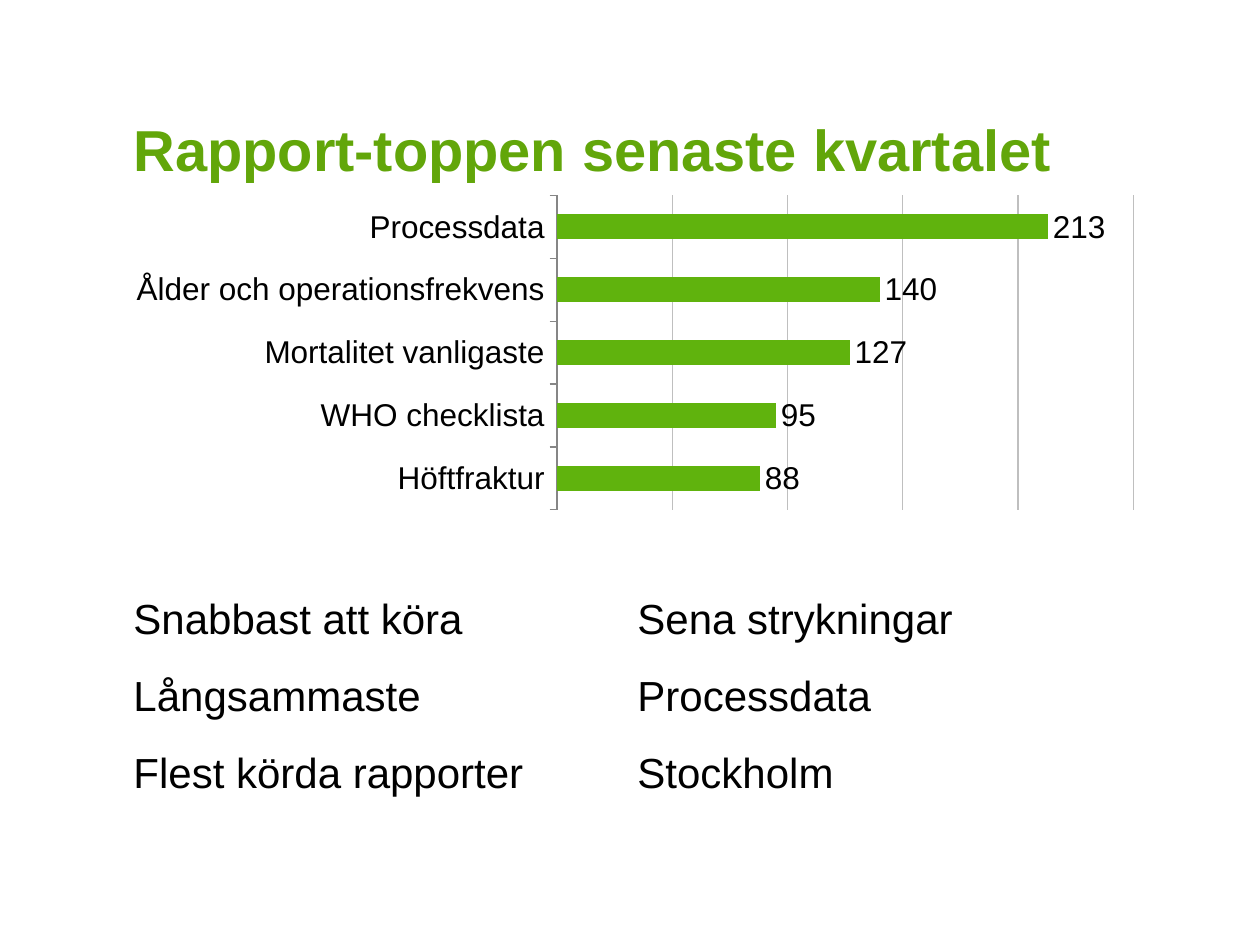
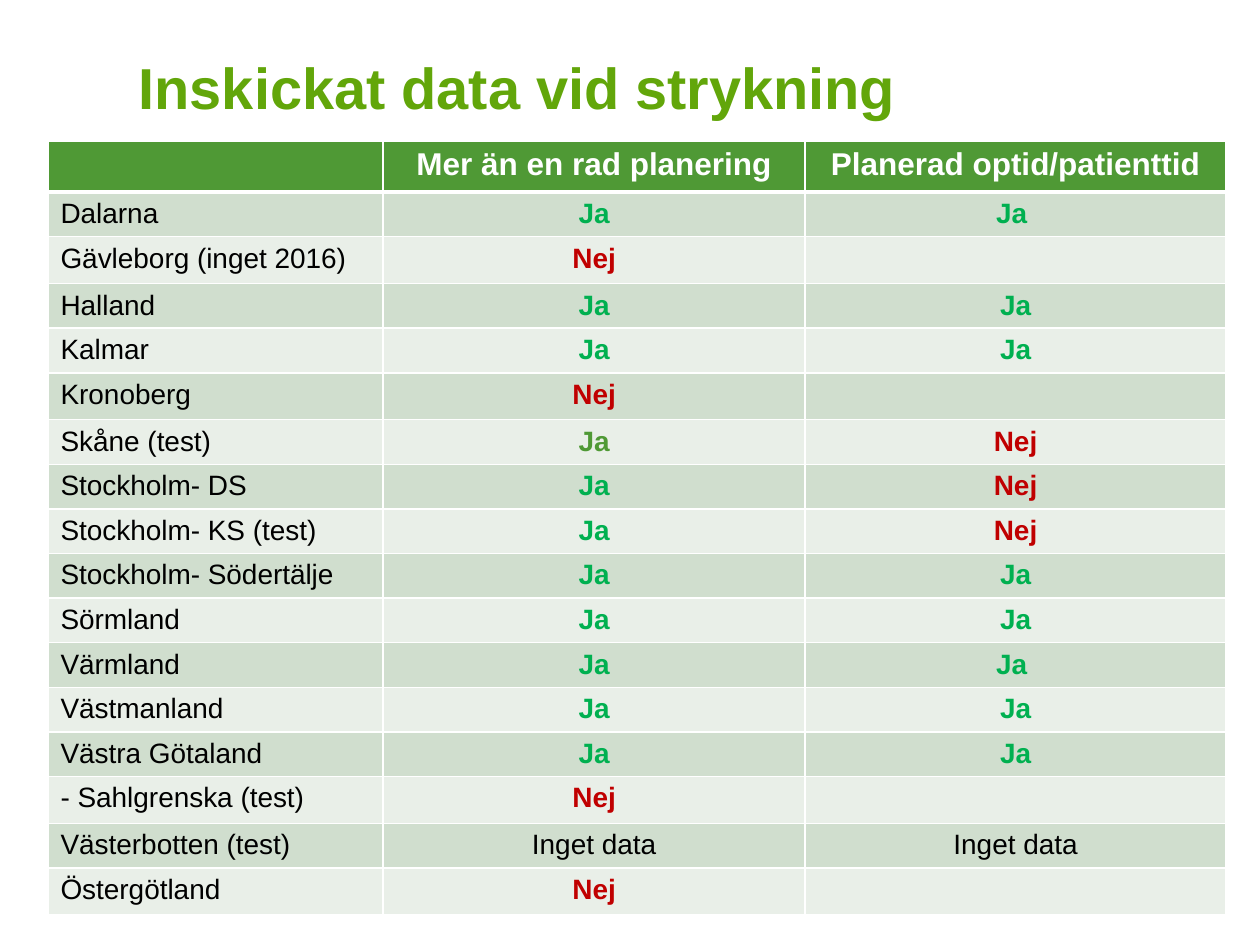
from dataclasses import dataclass

from lxml.etree import SubElement
from pptx import Presentation
from pptx.chart.data import CategoryChartData
from pptx.dml.color import RGBColor
from pptx.enum.chart import XL_CHART_TYPE, XL_LABEL_POSITION, XL_TICK_LABEL_POSITION, XL_TICK_MARK
from pptx.enum.text import MSO_ANCHOR, MSO_AUTO_SIZE, PP_ALIGN
from pptx.oxml import parse_xml
from pptx.oxml.ns import nsdecls, qn
from pptx.util import Pt


@dataclass(frozen=True)
class Theme:
    font: str = "Arial"
    title: str = "62A60A"
    bar: str = "60B30D"
    grid: str = "BFBFBF"
    axis: str = "868686"
    text: str = "000000"
    white: str = "FFFFFF"
    header: str = "4F9935"
    bands: tuple = ("D0DECE", "E9EFE8")
    yes: str = "00B050"
    no: str = "C00000"
    title_size: int = 33
    body_size: int = 24
    header_size: int = 18
    chart_size: int = 18
    cell_size: int = 16


THEME = Theme()

REPORTS_TITLE = "Rapport-toppen senaste kvartalet"
REPORTS = {
    "Processdata": 213,
    "Ålder och operationsfrekvens": 140,
    "Mortalitet vanligaste": 127,
    "WHO checklista": 95,
    "Höftfraktur": 88,
}
RECORDS = [
    ("Snabbast att köra", "Sena strykningar"),
    ("Långsammaste", "Processdata"),
    ("Flest körda rapporter", "Stockholm"),
]

REGIONS_TITLE = "Inskickat data vid strykning"
REGION_HEADER = ("", "Mer än en rad planering", "Planerad optid/patienttid")
REGIONS = [
    ("Dalarna", "Ja", "Ja "),
    ("Gävleborg (inget 2016)", "Nej", ""),
    ("Halland", "Ja", "Ja"),
    ("Kalmar", "Ja", "Ja"),
    ("Kronoberg", "Nej", ""),
    ("Skåne (test)", "Ja", "Nej"),
    ("Stockholm- DS", "Ja", "Nej"),
    ("Stockholm- KS (test)", "Ja", "Nej"),
    ("Stockholm- Södertälje", "Ja", "Ja"),
    ("Sörmland", "Ja", "Ja"),
    ("Värmland", "Ja", "Ja "),
    ("Västmanland", "Ja", "Ja"),
    ("Västra Götaland", "Ja", "Ja"),
    ("- Sahlgrenska (test)", "Nej", ""),
    ("Västerbotten (test)", "Inget data", "Inget data"),
    ("Östergötland", "Nej", ""),
]
ANSWER_COLORS = {"Ja": THEME.yes, "Nej": THEME.no}
SPECIAL_COLORS = {("Skåne (test)", 1): THEME.header}

COLUMN_WIDTHS = (191.5, 241.2, 240.5)
HEADER_HEIGHT, ROW_HEIGHT = 29, 25.5


def style_font(font, size, color, bold=False):
    font.name = THEME.font
    font.size = Pt(size)
    font.bold = bold
    font.color.rgb = RGBColor.from_string(color)


def clear_frame(frame):
    frame.margin_left = frame.margin_right = frame.margin_top = frame.margin_bottom = 0
    frame.word_wrap = True
    frame.auto_size = MSO_AUTO_SIZE.NONE


def add_titled_slide(deck, heading, left, top, width):
    slide = deck.slides.add_slide(deck.slide_layouts[5])
    title = slide.shapes.title
    title.left, title.top, title.width, title.height = Pt(left), Pt(top), Pt(width), Pt(67.7)
    frame = title.text_frame
    clear_frame(frame)
    frame.vertical_anchor = MSO_ANCHOR.BOTTOM
    frame.text = heading
    frame.paragraphs[0].alignment = PP_ALIGN.LEFT
    style_font(frame.paragraphs[0].runs[0].font, THEME.title_size, THEME.title, True)
    return slide


def add_report_chart(slide):
    ranking = CategoryChartData()
    ranking.categories = list(REPORTS)
    ranking.add_series("Series 1", list(REPORTS.values()))
    chart = slide.shapes.add_chart(
        XL_CHART_TYPE.BAR_CLUSTERED, Pt(66.2), Pt(108), Pt(593.3), Pt(187.2), ranking
    ).chart
    chart.has_legend = False
    chart.has_title = False
    style_font(chart.font, THEME.chart_size, THEME.text)

    names = chart.category_axis
    names.reverse_order = True
    names.has_major_gridlines = False
    names.major_tick_mark = XL_TICK_MARK.OUTSIDE
    names.tick_label_position = XL_TICK_LABEL_POSITION.NEXT_TO_AXIS
    names.format.line.color.rgb = RGBColor.from_string(THEME.axis)
    names.format.line.width = Pt(0.75)

    counts = chart.value_axis
    counts.minimum_scale, counts.maximum_scale, counts.major_unit = 0, 250, 50
    counts.visible = False
    counts.has_major_gridlines = True
    counts.major_gridlines.format.line.color.rgb = RGBColor.from_string(THEME.grid)
    counts.major_gridlines.format.line.width = Pt(0.75)

    plot = chart.plots[0]
    plot.gap_width = 150
    plot.vary_by_categories = False
    bars = plot.series[0]
    bars.format.fill.solid()
    bars.format.fill.fore_color.rgb = RGBColor.from_string(THEME.bar)
    plot.has_data_labels = True
    plot.data_labels.show_value = True
    plot.data_labels.position = XL_LABEL_POSITION.OUTSIDE_END
    style_font(plot.data_labels.font, THEME.chart_size, THEME.text)

    plot_area = chart.element.find(".//" + qn("c:plotArea"))
    for layout in plot_area.findall(qn("c:layout")):
        plot_area.remove(layout)
    bounds = {"x": 0.425, "y": 0.02, "w": 0.555, "h": 0.96}
    modes = "".join(f'<c:{side}Mode val="edge"/>' for side in "xy")
    sizes = "".join(f'<c:{side} val="{share}"/>' for side, share in bounds.items())
    plot_area.insert(0, parse_xml(
        f'<c:layout {nsdecls("c")}><c:manualLayout><c:layoutTarget val="inner"/>'
        f"{modes}{sizes}</c:manualLayout></c:layout>"
    ))


def add_records(slide):
    frame = slide.shapes.add_textbox(Pt(76.3), Pt(337), Pt(568), Pt(91.4)).text_frame
    clear_frame(frame)
    for index, record in enumerate(RECORDS):
        line = frame.add_paragraph() if index else frame.paragraphs[0]
        line.text = "\t".join(record)
        tabs = SubElement(line._p.get_or_add_pPr(), qn("a:tabLst"))
        SubElement(tabs, qn("a:tab"), pos=str(Pt(288)), algn="l")
        line.line_spacing = 1.05
        if index:
            line.space_before = Pt(14)
        style_font(line.runs[0].font, THEME.body_size, THEME.text)


def set_borders(cell, top, bottom):
    properties = cell._tc.get_or_add_tcPr()
    for index, (side, width) in enumerate({"L": 1, "R": 1, "T": top, "B": bottom}.items()):
        properties.insert(index, parse_xml(
            f'<a:ln{side} {nsdecls("a")} w="{Pt(width)}"><a:solidFill>'
            f'<a:srgbClr val="{THEME.white}"/></a:solidFill></a:ln{side}>'
        ))


def fill_cell(cell, content, fill, size, color, bold, centred):
    cell.fill.solid()
    cell.fill.fore_color.rgb = RGBColor.from_string(fill)
    cell.text_frame.text = content
    line = cell.text_frame.paragraphs[0]
    if centred:
        line.alignment = PP_ALIGN.CENTER
    for run in line.runs:
        style_font(run.font, size, color, bold)
    if not content:
        SubElement(line._p, qn("a:endParaRPr"), sz=str(size * 100))


def add_region_table(slide):
    rows = len(REGIONS) + 1
    height = HEADER_HEIGHT + ROW_HEIGHT * len(REGIONS)
    table = slide.shapes.add_table(
        rows, len(REGION_HEADER), Pt(27.4), Pt(80.6), Pt(sum(COLUMN_WIDTHS)), Pt(height)
    ).table
    for column, width in zip(table.columns, COLUMN_WIDTHS):
        column.width = Pt(width)
    for index, row in enumerate(table.rows):
        row.height = Pt(ROW_HEIGHT if index else HEADER_HEIGHT)

    for column, heading in enumerate(REGION_HEADER):
        cell = table.cell(0, column)
        fill_cell(cell, heading, THEME.header, THEME.header_size, THEME.white, True, True)
        set_borders(cell, 1, 3)

    for index, region in enumerate(REGIONS):
        for column, content in enumerate(region):
            answer = ANSWER_COLORS.get(content.strip())
            color = SPECIAL_COLORS.get((region[0], column), answer or THEME.text)
            cell = table.cell(index + 1, column)
            fill_cell(cell, content, THEME.bands[index % 2], THEME.cell_size, color,
                      answer is not None, column > 0)
            set_borders(cell, 1 if index else 3, 1)


def main():
    deck = Presentation()
    deck.slide_width, deck.slide_height = Pt(720), Pt(540)

    reports = add_titled_slide(deck, REPORTS_TITLE, 76.3, 36.7, 568)
    add_report_chart(reports)
    add_records(reports)

    regions = add_titled_slide(deck, REGIONS_TITLE, 79.2, 1.4, 604)
    add_region_table(regions)

    deck.save("out.pptx")


if __name__ == "__main__":
    main()
